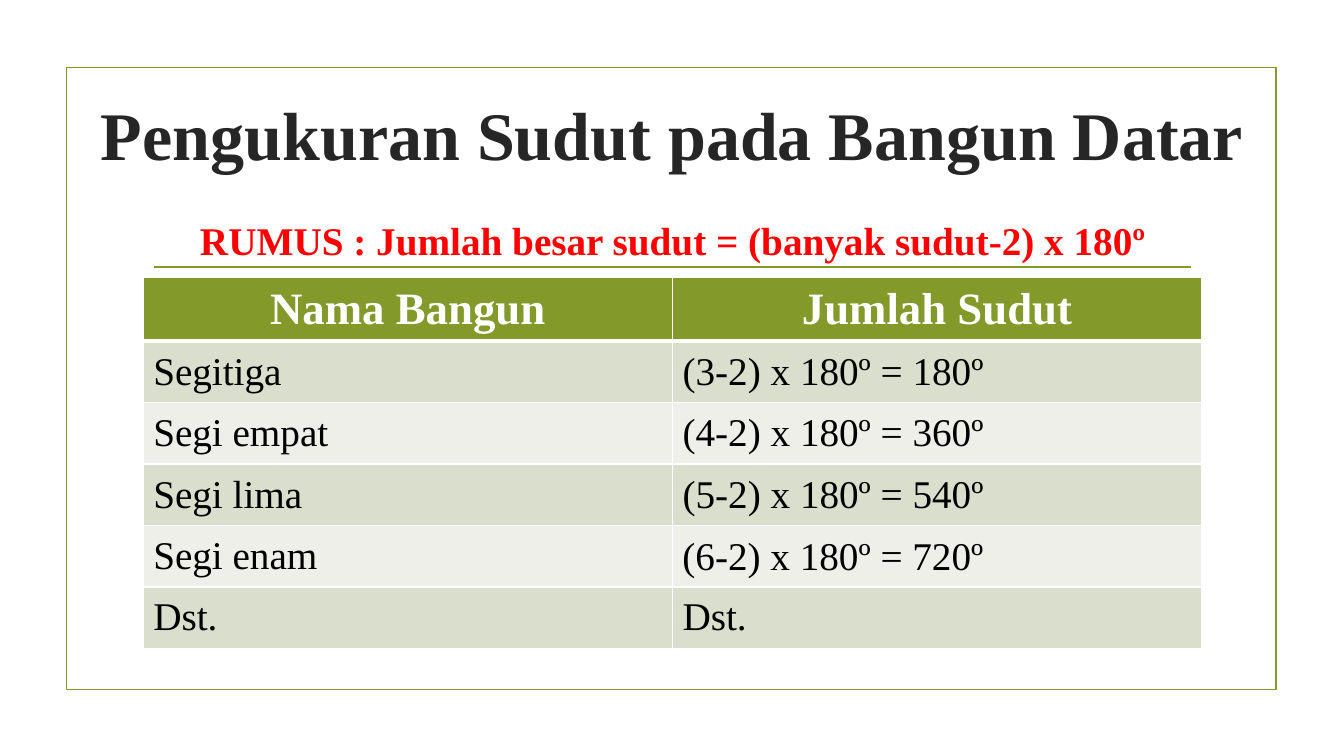
from lxml import etree
from pptx import Presentation, util as u
from pptx.dml.color import RGBColor
from pptx.enum import shapes, text
from pptx.oxml import ns

TITLE = "Pengukuran Sudut pada Bangun Datar"
RULE = "RUMUS : Jumlah besar sudut = (banyak sudut-2) x 180º"
ROWS = [
    ("Nama Bangun", "Jumlah Sudut"),
    ("Segitiga", "(3-2) x 180º = 180º"),
    ("Segi empat", "(4-2) x 180º = 360º"),
    ("Segi lima", "(5-2) x 180º = 540º"),
    ("Segi enam", ""),
    ("Dst.", "Dst."),
]
SIX = "(6-2) x 180º = 720º"
GREEN, WHITE, BLACK = "83992A", "FFFFFF", "000000"
BANDS = ["EDEFE8", "D9DECD"]
LEFT, TOP, COL, ROW = 1.42, 2.75, 5.25, 0.61


def tint(hue):
    return RGBColor.from_string(hue)


def write(frame, words, size=28, hue=BLACK, bold=False, mid=False):
    frame.word_wrap = True
    par = frame.paragraphs[0]
    par.alignment = text.PP_ALIGN.CENTER if mid else text.PP_ALIGN.LEFT
    run = par.add_run()
    run.text = words
    run.font.name = "Times New Roman"
    run.font.size = u.Pt(size)
    run.font.bold = bold
    run.font.color.rgb = tint(hue)


def box(x, y, w, h, words, **form):
    frame = slide.shapes.add_textbox(*map(u.Inches, (x, y, w, h))).text_frame
    write(frame, words, **form)
    return frame


def edge(cell, side, width):
    line = etree.SubElement(cell._tc.get_or_add_tcPr(), ns.qn("a:" + side))
    line.set("w", str(u.Pt(width)))
    fill = etree.SubElement(line, ns.qn("a:solidFill"))
    etree.SubElement(fill, ns.qn("a:srgbClr")).set("val", WHITE)


deck = Presentation()
deck.slide_width, deck.slide_height = u.Inches(13.33), u.Inches(7.5)
slide = deck.slides.add_slide(deck.slide_layouts[6])

frame = slide.shapes.add_shape(
    shapes.MSO_SHAPE.RECTANGLE, *map(u.Inches, (0.66, 0.67, 12, 6.17)))
frame.shadow.inherit = False
frame.fill.background()
line = slide.shapes.add_connector(
    shapes.MSO_CONNECTOR.STRAIGHT, *map(u.Inches, (1.53, 2.65, 11.81, 2.65)))
etree.SubElement(line._element.spPr, ns.qn("a:effectLst"))
for item in (frame, line):
    item.line.color.rgb = tint(GREEN)
    item.line.width = u.Pt(1.25)

head = box(0.42, 0.65, 12.49, 1.35, TITLE, size=48.6, hue="262626",
           bold=True, mid=True)
head.vertical_anchor = text.MSO_ANCHOR.MIDDLE
box(LEFT, 2.1, 2 * COL, 0.55, RULE, hue="FF0000", bold=True, mid=True)

grid = slide.shapes.add_table(
    len(ROWS), 2, *map(u.Inches, (LEFT, TOP, 2 * COL, ROW * len(ROWS)))).table
for col in grid.columns:
    col.width = u.Inches(COL)
for r, row in enumerate(ROWS):
    grid.rows[r].height = u.Inches(ROW)
    top = r == 0
    form = dict(size=32, hue=WHITE, bold=True, mid=True) if top else {}
    for c, words in enumerate(row):
        cell = grid.cell(r, c)
        cell.vertical_anchor = text.MSO_ANCHOR.MIDDLE
        for side in ("lnL", "lnR", "lnT", "lnB"):
            thick = (top and side == "lnB") or (r == 1 and side == "lnT")
            edge(cell, side, 3 if thick else 1)
        cell.fill.solid()
        cell.fill.fore_color.rgb = tint(GREEN if top else BANDS[r % 2])
        if words:
            write(cell.text_frame, words, **form)

box(LEFT + COL, 5.22, COL, 0.57, SIX)

deck.save("out.pptx")
